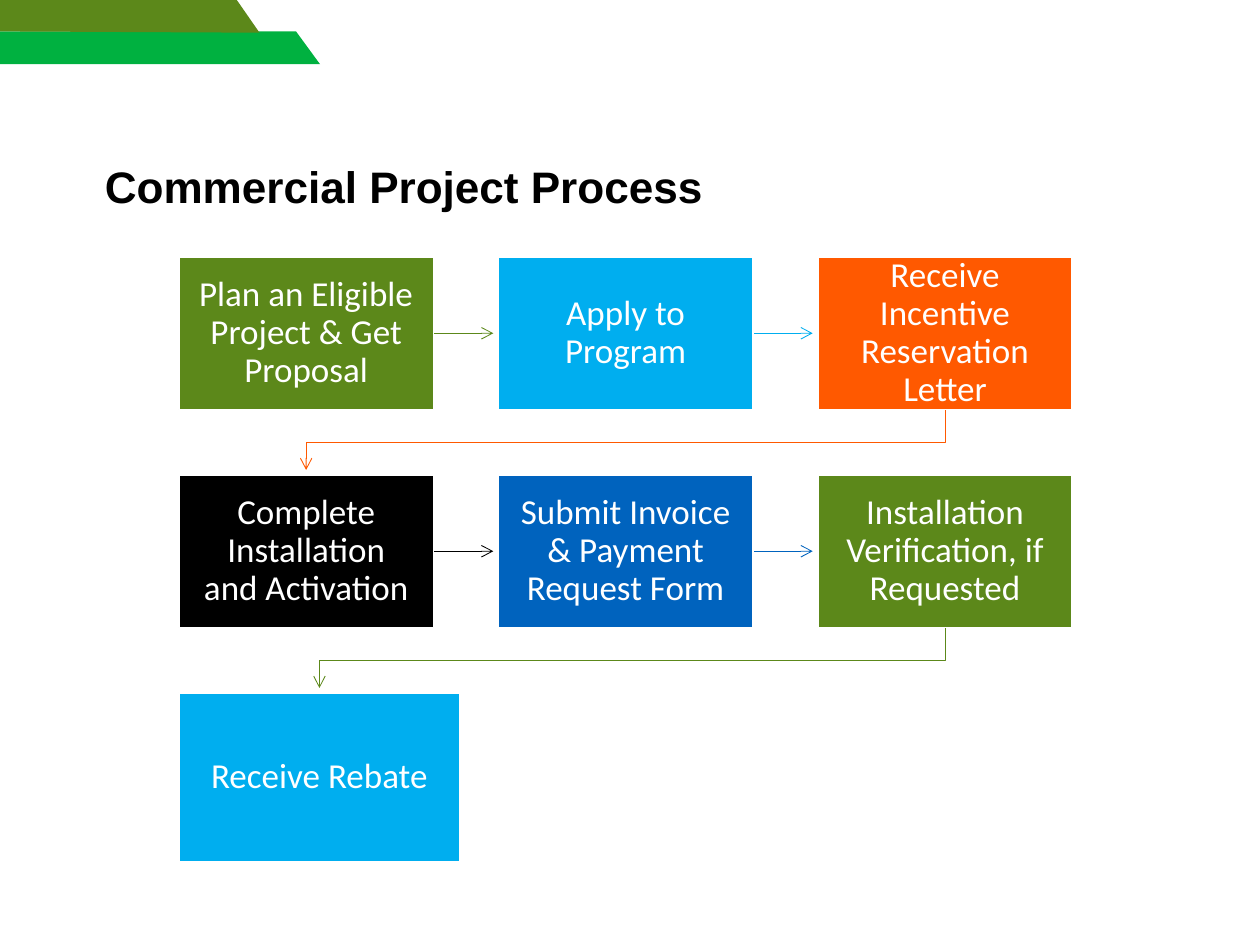
from itertools import pairwise

from lxml.etree import SubElement
from pptx import Presentation
from pptx.dml.color import RGBColor
from pptx.enum.shapes import MSO_CONNECTOR as Connector, MSO_SHAPE as Shape
from pptx.enum.text import MSO_ANCHOR as Anchor, PP_ALIGN as Align
from pptx.oxml.ns import qn
from pptx.util import Inches, Pt

TITLE = "Commercial Project Process"
STEPS = [
    ("Plan an Eligible Project & Get Proposal", "olive"),
    ("Apply to Program", "sky"),
    ("Receive Incentive Reservation Letter", "orange"),
    ("Complete Installation and Activation", "black"),
    ("Submit Invoice & Payment Request Form", "blue"),
    ("Installation Verification, if Requested", "olive"),
    ("Receive Rebate", "sky"),
]
BANNERS = [
    ("green", [(0, 0.25), (2.35, 0.25), (2.54, 0.51), (0, 0.51)]),
    ("olive", [(0, 0), (1.88, 0), (2.06, 0.26), (0, 0.25)]),
]
THEME = {
    "colors": {
        "olive": "5C881A", "green": "00B140", "sky": "00AEEF", "orange": "FF5900",
        "blue": "0063BE", "black": "000000", "white": "FFFFFF",
    },
    "title": {"font": "Arial", "size": 25.2, "color": "black", "bold": True},
    "step": {"font": "Calibri", "size": 20, "color": "white", "bold": False},
    "border": 1,
    "arrow": 0.5,
}
COLUMNS = 3
LEFT, TOP = 1.42, 2.04
STEP_SIZE, LAST_SIZE = (2.02, 1.21), (2.23, 1.34)
PITCH_X, PITCH_Y = 2.535, 1.73
ARROW_GAP = 0.04
STEP_INSET = 0.16


def color(name):
    return RGBColor.from_string(THEME["colors"][name])


def write(shape, text, style):
    frame = shape.text_frame
    frame.word_wrap = True
    frame.vertical_anchor = Anchor.MIDDLE
    para = frame.paragraphs[0]
    para.alignment = Align.CENTER
    para.line_spacing = 0.9
    span = para.add_run()
    span.text = text
    span.font.name = style["font"]
    span.font.size = Pt(style["size"])
    span.font.bold = style["bold"]
    span.font.color.rgb = color(style["color"])
    return frame


def add_outline(page, points, close):
    start, *rest = [(Inches(x), Inches(y)) for x, y in points]
    builder = page.shapes.build_freeform(*start)
    builder.add_line_segments(rest, close=close)
    outline = builder.convert_to_shape()
    outline.shadow.inherit = False
    return outline


def add_banner(page, name, points):
    banner = add_outline(page, points, close=True)
    banner.fill.solid()
    banner.fill.fore_color.rgb = color(name)
    banner.line.fill.background()


def add_title(page):
    box = page.shapes.add_textbox(*map(Inches, (0.58, 1.17, 5.25, 0.67)))
    write(box, TITLE, THEME["title"])


def step_area(index):
    row, column = divmod(index, COLUMNS)
    size = LAST_SIZE if index == len(STEPS) - 1 else STEP_SIZE
    return (LEFT + column * PITCH_X, TOP + row * PITCH_Y, *size)


def add_step(page, area, text, name):
    box = page.shapes.add_shape(Shape.RECTANGLE, *map(Inches, area))
    box.shadow.inherit = False
    box.fill.solid()
    box.fill.fore_color.rgb = color(name)
    box.line.color.rgb = color("white")
    box.line.width = Pt(THEME["border"])
    frame = write(box, text, THEME["step"])
    frame.margin_left = frame.margin_right = Inches(STEP_INSET)
    frame.margin_top = frame.margin_bottom = Inches(STEP_INSET)


def add_arrow(page, source, target, name):
    """Go straight to a step in the same row, or bend down to the next row."""
    left, top, width, height = source
    next_left, next_top, next_width, _ = target
    if top == next_top:
        y = top + height / 2
        ends = (left + width, y, next_left - ARROW_GAP, y)
        arrow = page.shapes.add_connector(Connector.STRAIGHT, *map(Inches, ends))
        SubElement(arrow.element.spPr, qn("a:effectLst"))
    else:
        start_x, end_x = left + width / 2, next_left + next_width / 2
        bottom = top + height
        middle = (bottom + next_top) / 2
        points = [(start_x, bottom), (start_x, middle),
                  (end_x, middle), (end_x, next_top - ARROW_GAP)]
        arrow = add_outline(page, points, close=False)
        arrow.fill.background()
    arrow.line.color.rgb = color(name)
    arrow.line.width = Pt(THEME["arrow"])
    SubElement(arrow.line._get_or_add_ln(), qn("a:tailEnd"), type="arrow")


def main():
    deck = Presentation()
    deck.slide_width, deck.slide_height = Inches(10), Inches(7.5)
    page = deck.slides.add_slide(deck.slide_layouts[6])
    for name, points in BANNERS:
        add_banner(page, name, points)
    add_title(page)
    areas = [step_area(index) for index in range(len(STEPS))]
    for (source, target), (_, name) in zip(pairwise(areas), STEPS):
        add_arrow(page, source, target, name)
    for area, (text, name) in zip(areas, STEPS):
        add_step(page, area, text, name)
    deck.save("out.pptx")


if __name__ == "__main__":
    main()
